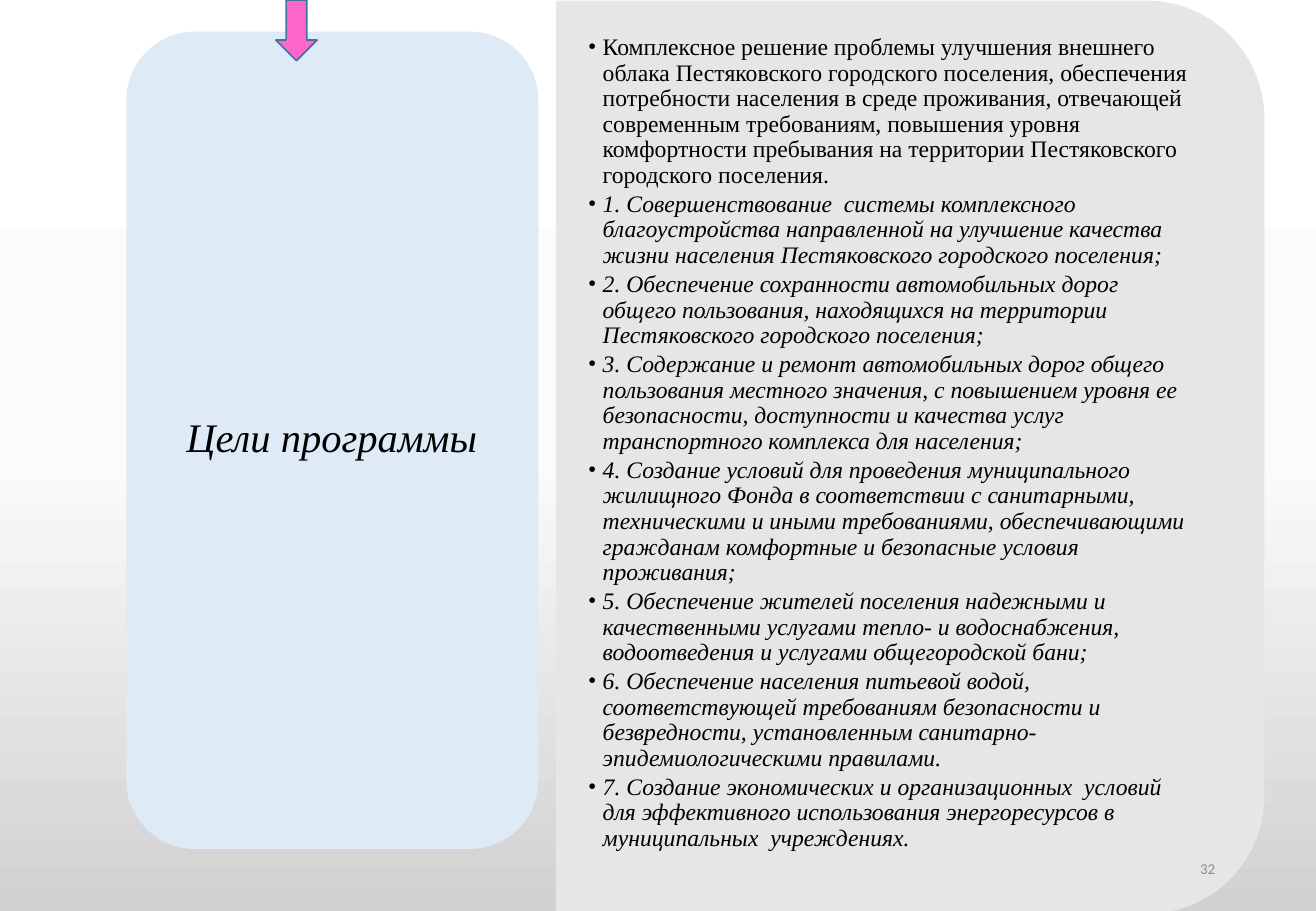
from copy import deepcopy

from pptx import Presentation
from pptx.dml.color import RGBColor
from pptx.enum.shapes import MSO_SHAPE as Shape
from pptx.enum.text import MSO_ANCHOR as Anchor, MSO_AUTO_SIZE as Auto, PP_ALIGN as Align
from pptx.oxml.ns import qn
from pptx.util import Inches, Pt

TITLE = "Цели программы"
AIM = (
    "Комплексное решение проблемы улучшения внешнего облака Пестяковского городского "
    "поселения, обеспечения потребности населения в среде проживания, отвечающей "
    "современным требованиям, повышения уровня комфортности пребывания на территории "
    "Пестяковского городского поселения."
)
GOALS = [
    "1. Совершенствование  системы комплексного благоустройства направленной на "
    "улучшение качества жизни населения Пестяковского городского поселения;",
    "2. Обеспечение сохранности автомобильных дорог общего пользования, находящихся "
    "на территории Пестяковского городского поселения;",
    "3. Содержание и ремонт автомобильных дорог общего пользования местного значения, "
    "с повышением уровня ее безопасности, доступности и качества услуг транспортного "
    "комплекса для населения;",
    "4. Создание условий для проведения муниципального жилищного Фонда в соответствии "
    "с санитарными, техническими и иными требованиями, обеспечивающими гражданам "
    "комфортные и безопасные условия проживания;",
    "5. Обеспечение жителей поселения надежными и качественными услугами тепло- и "
    "водоснабжения, водоотведения и услугами общегородской бани;",
    "6. Обеспечение населения питьевой водой, соответствующей требованиям безопасности "
    "и безвредности, установленным санитарно- эпидемиологическими правилами.",
    "7. Создание экономических и организационных  условий для эффективного "
    "использования энергоресурсов в муниципальных  учреждениях.",
]
NUMBER = "32"

COLORS = {
    "panel": "E7E6E6", "card": "DEEBF7", "arrow": "FF66CC", "edge": "43739E",
    "text": "000000", "number": "8C8C8C",
}
BACK = [(0, "FFFFFF"), (0.5, "FBFBFB"), (1, "D1D1D1")]
SERIF = "Times New Roman"


def rgb(name):
    return RGBColor.from_string(COLORS[name])


def paint_back(slide):
    fill = slide.background.fill
    fill.gradient()
    fill.gradient_angle = 270
    stops = slide.element.find(".//" + qn("a:gsLst"))
    stops.insert(1, deepcopy(stops[0]))
    for stop, (place, color) in zip(fill.gradient_stops, BACK):
        stop.position = place
        stop.color.rgb = RGBColor.from_string(color)


def add_block(slide, kind, box, color):
    block = slide.shapes.add_shape(kind, *map(Inches, box))
    block.shadow.inherit = False
    block.fill.solid()
    block.fill.fore_color.rgb = rgb(color)
    block.line.fill.background()
    return block


def set_frame(frame, anchor):
    frame.word_wrap = True
    frame.auto_size = Auto.NONE
    frame.vertical_anchor = anchor


def style(par, size, font=SERIF, color="text", italic=False):
    for run in par.runs:
        run.font.size = Pt(size)
        run.font.name = font
        run.font.italic = italic
        run.font.color.rgb = rgb(color)


def add_bullet(par):
    props = par._p.get_or_add_pPr()
    props.set("marL", str(Inches(0.12)))
    props.set("indent", str(Inches(-0.12)))
    props.append(props.makeelement(qn("a:buFont"), {"typeface": SERIF}))
    props.append(props.makeelement(qn("a:buChar"), {"char": "•"}))


def add_goals(slide):
    box = slide.shapes.add_textbox(*map(Inches, (4.57, 0.29, 5.54, 6.95)))
    frame = box.text_frame
    set_frame(frame, Anchor.TOP)
    frame.margin_left = frame.margin_right = Inches(0.27)
    frame.margin_top = frame.margin_bottom = 0
    frame.text = "\n".join([AIM] + GOALS)
    for i, par in enumerate(frame.paragraphs):
        par.line_spacing = 0.9
        par.space_after = Pt(2.1)
        add_bullet(par)
        style(par, 14, italic=i > 0)


def set_title(slide):
    title = slide.shapes.title
    title.left, title.top, title.width, title.height = map(Inches, (1.2, 0.42, 3.06, 6.4))
    frame = title.text_frame
    frame.text = TITLE
    set_frame(frame, Anchor.MIDDLE)
    par = frame.paragraphs[0]
    par.alignment = Align.CENTER
    par.line_spacing = 0.9
    style(par, 24, italic=True)
    slide.shapes.element.append(title.element)


def add_number(slide):
    box = slide.shapes.add_textbox(*map(Inches, (7.66, 6.95, 2.44, 0.4)))
    frame = box.text_frame
    frame.text = NUMBER
    set_frame(frame, Anchor.MIDDLE)
    par = frame.paragraphs[0]
    par.alignment = Align.RIGHT
    style(par, 8.9, "Calibri", "number")


def main():
    deck = Presentation()
    deck.slide_width, deck.slide_height = Inches(10.83), Inches(7.5)
    slide = deck.slides.add_slide(deck.slide_layouts[5])
    paint_back(slide)

    panel = add_block(slide, Shape.ROUND_2_SAME_RECTANGLE, (3.73, 0.85, 7.52, 5.83), "panel")
    panel.rotation = 90
    add_goals(slide)
    add_block(slide, Shape.ROUNDED_RECTANGLE, (1.04, 0.26, 3.39, 6.73), "card")
    set_title(slide)
    arrow = add_block(slide, Shape.DOWN_ARROW, (2.27, 0, 0.34, 0.5), "arrow")
    arrow.line.color.rgb = rgb("edge")
    arrow.line.width = Pt(1)
    add_number(slide)
    deck.save("out.pptx")


if __name__ == "__main__":
    main()
